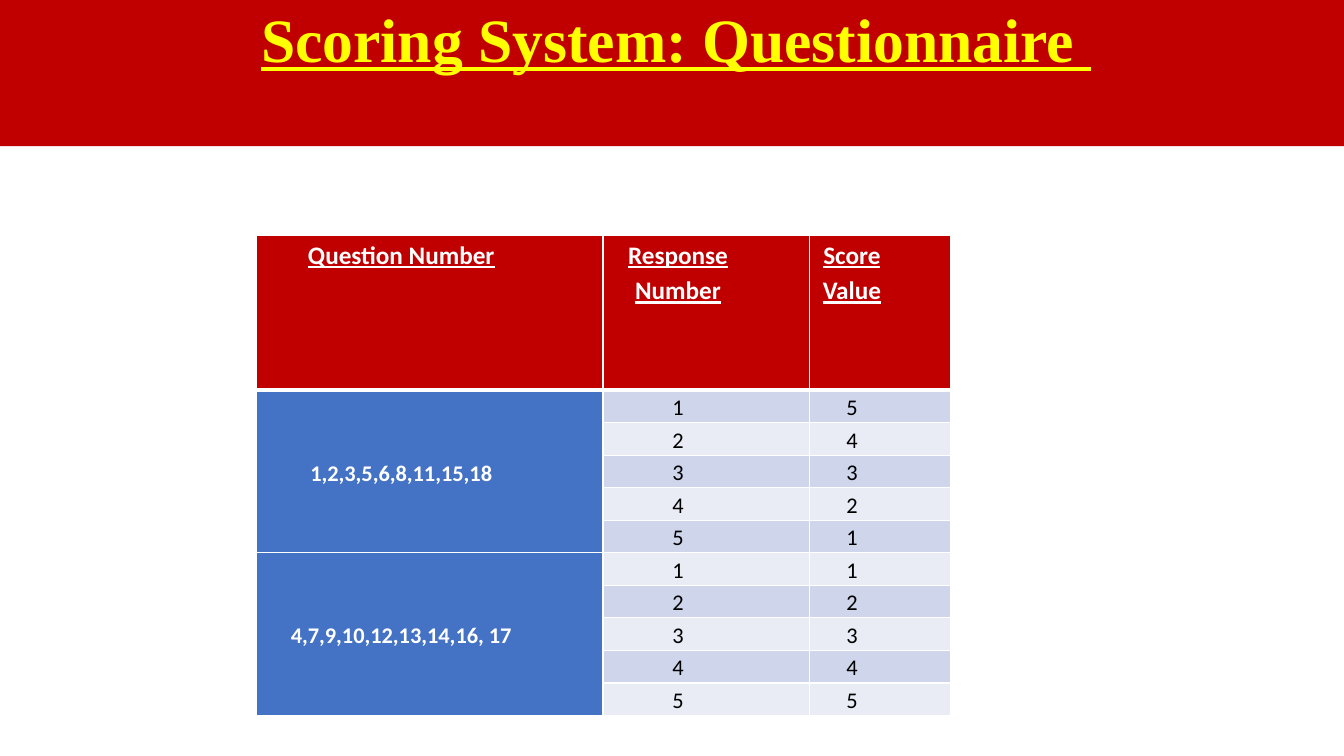
import pptx
import pptx.dml.color
import pptx.enum.text
import pptx.oxml
import pptx.oxml.ns
import pptx.util

Inches, Pt = pptx.util.Inches, pptx.util.Pt
RGBColor = pptx.dml.color.RGBColor
ALIGN, ANCHOR = pptx.enum.text.PP_ALIGN, pptx.enum.text.MSO_ANCHOR

# Content
TITLE = "Scoring System: Questionnaire "
HEADERS = ["Question Number", "Response Number", "Score Value"]
GROUPS = [
    ("1,2,3,5,6,8,11,15,18", [5, 4, 3, 2, 1]),
    ("4,7,9,10,12,13,14,16, 17", [1, 2, 3, 4, 5]),
]

# Colours and formats
RED = RGBColor(0xC0, 0x00, 0x00)
YELLOW = RGBColor(0xFF, 0xFF, 0x00)
WHITE = RGBColor(0xFF, 0xFF, 0xFF)
BLACK = RGBColor(0x00, 0x00, 0x00)
BLUE = RGBColor(0x44, 0x72, 0xC4)
BANDS = [RGBColor(0xCF, 0xD5, 0xEA), RGBColor(0xE9, 0xEB, 0xF5)]
TITLE_FONT = {"name": "Times New Roman", "size": Pt(44), "bold": True, "underline": True}
HEADER_FONT = {"name": "Calibri", "size": Pt(18), "bold": True, "underline": True}
QUESTION_FONT = {"name": "Calibri", "size": Pt(16), "bold": True, "underline": False}
VALUE_FONT = {"name": "Calibri", "size": Pt(16), "bold": False, "underline": False}
CELL_LAYOUT = {"margin_left": Inches(0.07), "margin_right": Inches(0.63),
               "margin_top": 0, "margin_bottom": 0}

# Table geometry
COLUMN_WIDTHS = [3.44, 2.05, 1.4]
HEADER_HEIGHT, ROW_HEIGHT = 1.53, 0.323


def set_attributes(target, values):
    for name, value in values.items():
        setattr(target, name, value)


def write(text_frame, text, font_values, color, paragraph_values):
    text_frame.text = text
    paragraph = text_frame.paragraphs[0]
    set_attributes(paragraph, {"alignment": ALIGN.CENTER, **paragraph_values})
    font = paragraph.runs[0].font
    set_attributes(font, font_values)
    font.color.rgb = color


def add_borders(cell, widths):
    properties = cell._tc.get_or_add_tcPr()
    for side, width in widths.items():
        properties.append(pptx.oxml.parse_xml(
            f'<a:ln{side} {pptx.oxml.ns.nsdecls("a")} w="{Pt(width)}"><a:solidFill>'
            f'<a:srgbClr val="{WHITE}"/></a:solidFill></a:ln{side}>'))


def style_cell(cell, fill, borders):
    add_borders(cell, borders)
    cell.fill.solid()
    cell.fill.fore_color.rgb = fill


def fill_cell(cell, text, font_values, color, anchor):
    set_attributes(cell, {**CELL_LAYOUT, "vertical_anchor": anchor})
    write(cell.text_frame, text, font_values, color,
          {"line_spacing": 1.15, "space_before": Pt(0.1)})


presentation = pptx.Presentation()
set_attributes(presentation, {"slide_width": Inches(13.33), "slide_height": Inches(7.5)})
slide = presentation.slides.add_slide(presentation.slide_layouts[5])

# Title band
title = slide.shapes.title
set_attributes(title, {"left": 0, "top": 0, "width": Inches(13.41), "height": Inches(1.45)})
title.fill.solid()
title.fill.fore_color.rgb = RED
set_attributes(title.text_frame, {"vertical_anchor": ANCHOR.TOP, "margin_top": Inches(0.09),
                                  "word_wrap": True})
write(title.text_frame, TITLE, TITLE_FONT, YELLOW, {"line_spacing": 0.9})

# Scoring table
row_count = 1 + sum(len(scores) for _, scores in GROUPS)
table = slide.shapes.add_table(
    row_count, len(HEADERS), Inches(2.54), Inches(2.34), Inches(sum(COLUMN_WIDTHS)),
    Inches(HEADER_HEIGHT + (row_count - 1) * ROW_HEIGHT)).table
for column, width in zip(table.columns, COLUMN_WIDTHS):
    column.width = Inches(width)
for index, row in enumerate(table.rows):
    row.height = Inches(ROW_HEIGHT if index else HEADER_HEIGHT)
    for column_index, cell in enumerate(row.cells):
        if index == 0:
            fill = RED
        else:
            fill = BANDS[(index - 1) % 2] if column_index else BLUE
        style_cell(cell, fill, {"L": 1, "R": 1, "T": 3 if index == 1 else 1,
                                "B": 1 if index else 3})

# Header row
for column_index, header in enumerate(HEADERS):
    fill_cell(table.cell(0, column_index), header, HEADER_FONT, WHITE, ANCHOR.TOP)

# Question groups with their responses and scores
first_row = 1
for questions, scores in GROUPS:
    question_cell = table.cell(first_row, 0)
    question_cell.merge(table.cell(first_row + len(scores) - 1, 0))
    fill_cell(question_cell, questions, QUESTION_FONT, WHITE, ANCHOR.MIDDLE)
    for offset, score in enumerate(scores):
        for column_index, value in enumerate((offset + 1, score), start=1):
            fill_cell(table.cell(first_row + offset, column_index), str(value),
                      VALUE_FONT, BLACK, ANCHOR.TOP)
    first_row += len(scores)

presentation.save("out.pptx")
